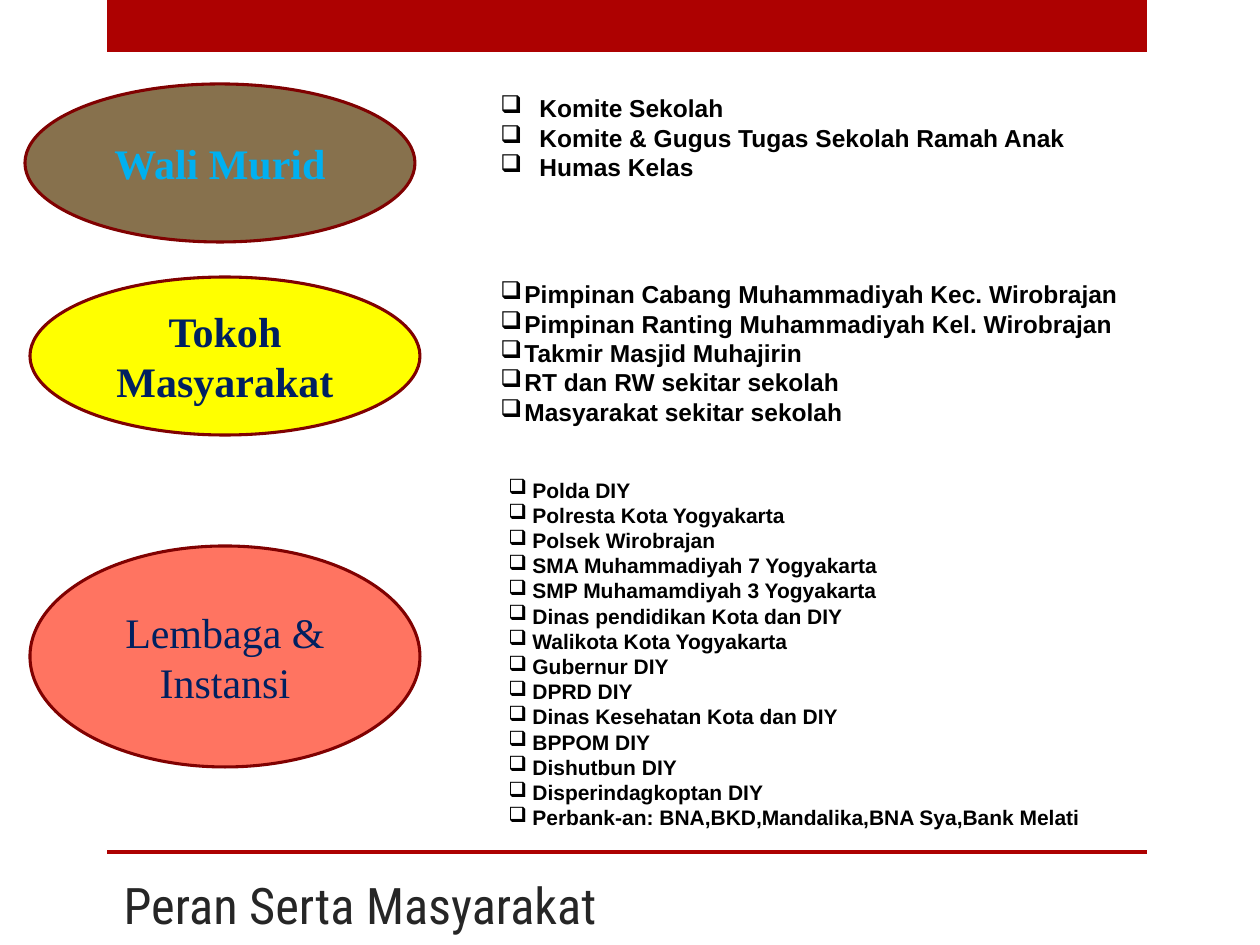
from lxml import etree
from pptx import Presentation
from pptx.dml.color import RGBColor
from pptx.enum.shapes import MSO_SHAPE
from pptx.enum.text import MSO_ANCHOR, MSO_AUTO_SIZE, PP_ALIGN
from pptx.oxml.ns import qn
from pptx.util import Pt

RECT, OVAL = MSO_SHAPE.RECTANGLE, MSO_SHAPE.OVAL
MIDDLE, BOTTOM = MSO_ANCHOR.MIDDLE, MSO_ANCHOR.BOTTOM
LEFT, CENTER = PP_ALIGN.LEFT, PP_ALIGN.CENTER
FIXED = MSO_AUTO_SIZE.NONE

RED = RGBColor(0xAD, 0x01, 0x01)
MAROON = RGBColor(0x80, 0x01, 0x01)
BROWN = RGBColor(0x87, 0x71, 0x4D)
YELLOW = RGBColor(0xFF, 0xFF, 0x00)
CORAL = RGBColor(0xFF, 0x74, 0x61)
SKY = RGBColor(0x00, 0xB0, 0xF0)
NAVY = RGBColor(0x00, 0x20, 0x60)
GREY = RGBColor(0x26, 0x26, 0x26)
BLACK = RGBColor(0x00, 0x00, 0x00)

PX = 914400 // 126


def place(*box):
    """Turn px lengths into EMU."""
    return [n * PX for n in box]


def style(para, face, size, color, bold, align):
    para.alignment = align
    font = para.font
    font.name, font.size, font.bold = face, Pt(size), bold
    font.color.rgb = color


deck = Presentation()
deck.slide_width, deck.slide_height = place(1260, 945)
slide = deck.slides.add_slide(deck.slide_layouts[5])
shapes = slide.shapes

# Title
title = shapes.title
title.left, title.top, title.width, title.height = place(111, 868, 708, 73)
frame = title.text_frame
frame.text = "Peran Serta Masyarakat"
frame.auto_size = FIXED
frame.vertical_anchor = BOTTOM
style(frame.paragraphs[0], "Roboto Condensed", 28.8, GREY, False, LEFT)

# Red bars at top and bottom
for top, height in [(0, 52), (850, 4)]:
    bar = shapes.add_shape(RECT, *place(107, top, 1040, height))
    bar.shadow.inherit = False
    bar.fill.solid()
    bar.fill.fore_color.rgb = RED
    bar.line.fill.background()

# Groups of partners
groups = [
    ("Wali Murid", 25, 84, 158, BROWN, SKY, True),
    ("Tokoh Masyarakat", 30, 277, 158, YELLOW, NAVY, True),
    ("Lembaga & Instansi", 30, 546, 221, CORAL, NAVY, False),
]
for text, left, top, height, fill, color, bold in groups:
    oval = shapes.add_shape(OVAL, *place(left, top, 390, height))
    oval.shadow.inherit = False
    oval.fill.solid()
    oval.fill.fore_color.rgb = fill
    oval.line.color.rgb = MAROON
    oval.line.width = Pt(1.75)
    frame = oval.text_frame
    frame.text = text
    frame.word_wrap = True
    frame.vertical_anchor = MIDDLE
    style(frame.paragraphs[0], "Times New Roman", 24, color, bold, CENTER)

# Members of each group: box, text size, indent, lines
lists = [
    ((488, 87, 592, 102), 14, 39, [
        "Komite Sekolah",
        "Komite & Gugus Tugas Sekolah Ramah Anak",
        "Humas Kelas",
    ]),
    ((488, 273, 660, 161), 14, 24, [
        "Pimpinan Cabang Muhammadiyah Kec. Wirobrajan",
        "Pimpinan Ranting Muhammadiyah Kel. Wirobrajan",
        "Takmir Masjid Muhajirin",
        "RT dan RW sekitar sekolah",
        "Masyarakat sekitar sekolah",
    ]),
    ((496, 471, 650, 369), 12, 24, [
        "Polda DIY",
        "Polresta Kota Yogyakarta",
        "Polsek Wirobrajan",
        "SMA Muhammadiyah 7 Yogyakarta",
        "SMP Muhamamdiyah 3 Yogyakarta",
        "Dinas pendidikan Kota dan DIY",
        "Walikota Kota Yogyakarta",
        "Gubernur DIY",
        "DPRD DIY",
        "Dinas Kesehatan Kota dan DIY",
        "BPPOM DIY",
        "Dishutbun DIY",
        "Disperindagkoptan DIY",
        "Perbank-an: BNA,BKD,Mandalika,BNA Sya,Bank Melati",
    ]),
]
for box, size, indent, lines in lists:
    frame = shapes.add_textbox(*place(*box)).text_frame
    frame.word_wrap = True
    frame.text = "\n".join(lines)
    for para in frame.paragraphs:
        style(para, "Arial", size, BLACK, True, LEFT)
        props = para._p.get_or_add_pPr()
        props.set("marL", str(indent * PX))
        props.set("indent", str(-indent * PX))
        mark = etree.Element(qn("a:buChar"), char="❑")
        props.insert_element_before(mark, "a:tabLst", "a:defRPr", "a:extLst")

deck.save("out.pptx")
